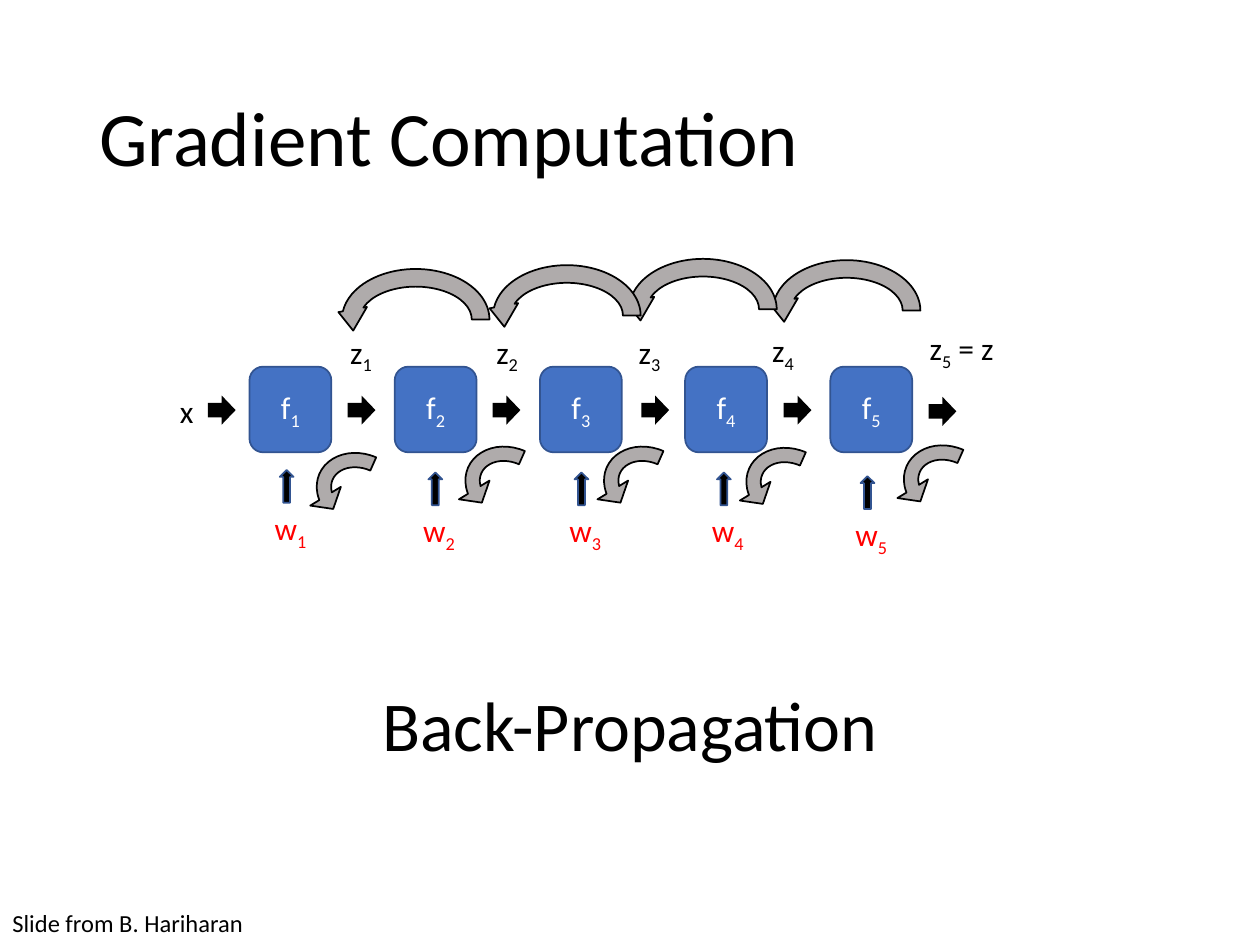
from pptx import Presentation
from pptx.dml.color import RGBColor
from pptx.enum.shapes import MSO_SHAPE
from pptx.enum.text import MSO_ANCHOR, PP_ALIGN
from pptx.oxml.ns import qn
from pptx.util import Inches, Pt

BLACK = RGBColor(0x00, 0x00, 0x00)
WHITE = RGBColor(0xFF, 0xFF, 0xFF)
RED = RGBColor(0xFF, 0x00, 0x00)
BLUE = RGBColor(0x44, 0x72, 0xC4)
DARK_BLUE = RGBColor(0x32, 0x54, 0x91)
GRAY = RGBColor(0xAF, 0xAB, 0xAB)

BLOCK_LEFT, BLOCK_STEP = 1.98, 1.1525
WEIGHTS = [(2.05, 3.99), (3.23, 4.01), (4.39, 4.01), (5.52, 4.01), (6.66, 4.04)]
OUTPUTS = [(2.68, 2.59), (3.84, 2.59), (4.97, 2.59), (6.03, 2.58), (7.28, 2.56)]
FORWARD_ARROWS = [(1.65, 3.14), (2.76, 3.14), (3.91, 3.14),
                  (5.09, 3.14), (6.22, 3.14), (7.37, 3.15)]
CHAIN_ARCS = [(6.09, 2.02), (4.95, 2.01), (3.87, 2.06), (2.67, 2.09)]
WEIGHT_ARCS = [(5.89, 3.42), (4.76, 3.41), (3.66, 3.41), (2.48, 3.46), (7.14, 3.4)]
CHAIN_BEND = (0.158, 11.423, 210.669, 108, 0.129)
WEIGHT_BEND = (0.149, 14.778, 180.319, 108, 0.185)


def write_text(shape, parts, size=18, color=BLACK, align=PP_ALIGN.LEFT,
               anchor=MSO_ANCHOR.TOP, spacing=None):
    """Write parts in turn; every second part is a subscript."""
    frame = shape.text_frame
    frame.word_wrap = True
    frame.vertical_anchor = anchor
    paragraph = frame.paragraphs[0]
    paragraph.alignment = align
    paragraph.line_spacing = spacing
    for index, part in enumerate(parts):
        run = paragraph.add_run()
        run.text = part
        for name, value in {"name": "Calibri", "size": Pt(size)}.items():
            setattr(run.font, name, value)
        run.font.color.rgb = color
        if index % 2:
            run.font._element.set("baseline", "-25000")


def add_label(slide, box, *parts, **text_format):
    label = slide.shapes.add_textbox(*map(Inches, box))
    write_text(label, parts, **text_format)


def add_figure(slide, kind, box, fill, line=None):
    shape = slide.shapes.add_shape(kind, *map(Inches, box))
    shape.shadow.inherit = False
    shape.fill.solid()
    shape.fill.fore_color.rgb = fill
    if line is None:
        shape.line.fill.background()
    else:
        shape.line.color.rgb = line
        shape.line.width = Pt(1)
    return shape


def add_back_arc(slide, box, bend, rotation=0):
    """Add a curved arrow that runs from right to left."""
    arc = add_figure(slide, MSO_SHAPE.CIRCULAR_ARROW, box, GRAY, BLACK)
    for index, value in enumerate(bend):
        arc.adjustments[index] = value
    arc.rotation = rotation
    arc._element.spPr.find(qn("a:xfrm")).set("flipH", "1")


def add_forward_pass(slide):
    for index in range(5):
        box = (BLOCK_LEFT + index * BLOCK_STEP, 2.91, 0.65, 0.68)
        block = add_figure(slide, MSO_SHAPE.ROUNDED_RECTANGLE, box, BLUE, DARK_BLUE)
        write_text(block, ("f", str(index + 1)), color=WHITE,
                   align=PP_ALIGN.CENTER, anchor=MSO_ANCHOR.MIDDLE)
    add_label(slide, (1.33, 3.06, 0.32, 0.4), "x")
    for left, top in FORWARD_ARROWS:
        add_figure(slide, MSO_SHAPE.RIGHT_ARROW, (left, top, 0.22, 0.23), BLACK)


def add_weights(slide):
    for number, (left, top) in enumerate(WEIGHTS, 1):
        add_label(slide, (left, top, 0.51, 0.4), "w", str(number),
                  color=RED, align=PP_ALIGN.CENTER)
        add_figure(slide, MSO_SHAPE.UP_ARROW, (left + 0.17, top - 0.26, 0.11, 0.26),
                   BLACK, DARK_BLUE)


def add_outputs(slide):
    for number, (left, top) in enumerate(OUTPUTS, 1):
        is_last = number == len(OUTPUTS)
        width, height = (0.77, 0.4) if is_last else (0.41, 0.61)
        ending = (" = z",) if is_last else ()
        add_label(slide, (left, top, width, height), "z", str(number), *ending)


def add_backward_pass(slide):
    for left, top in CHAIN_ARCS:
        add_back_arc(slide, (left, top, 1.26, 0.89), CHAIN_BEND)
    for left, top in WEIGHT_ARCS:
        add_back_arc(slide, (left, top, 0.77, 0.89), WEIGHT_BEND, 293.7)


def main():
    presentation = Presentation()
    presentation.slide_width = Inches(10)
    presentation.slide_height = Inches(7.5)
    slide = presentation.slides.add_slide(presentation.slide_layouts[6])
    add_label(slide, (0.69, 0.4, 8.62, 1.45), "Gradient Computation",
              size=44, anchor=MSO_ANCHOR.MIDDLE, spacing=0.9)
    add_forward_pass(slide)
    add_weights(slide)
    add_outputs(slide)
    add_backward_pass(slide)
    add_label(slide, (0, 7.16, 2.07, 0.34), "Slide from B. Hariharan", size=14)
    add_label(slide, (2.67, 5.36, 4.66, 0.77), "Back-Propagation",
              size=40, align=PP_ALIGN.CENTER)
    presentation.save("out.pptx")


if __name__ == "__main__":
    main()
